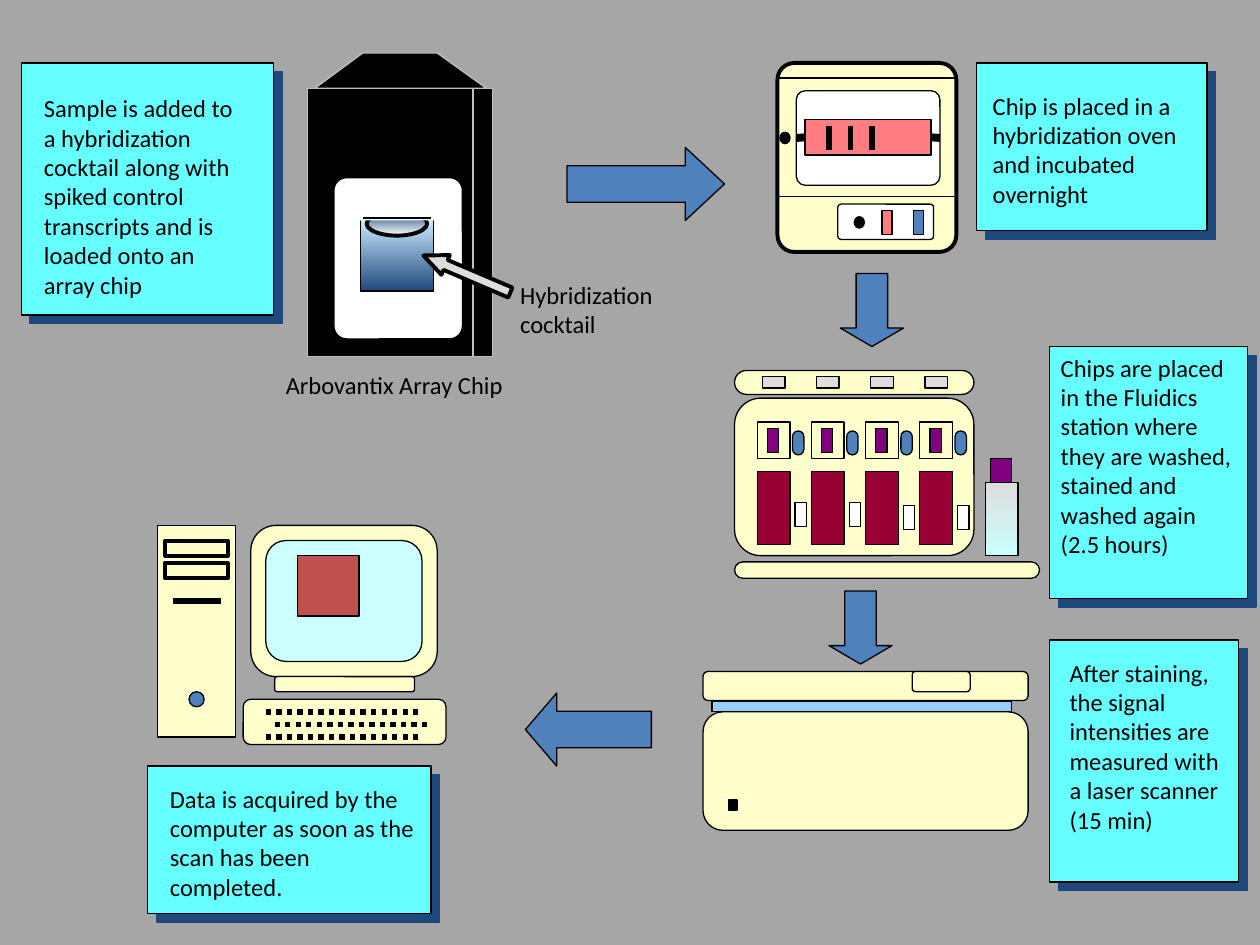
import pptx
import pptx.util
import pptx.dml.color
import pptx.enum.dml
import pptx.enum.shapes
import pptx.enum.text
import pptx.oxml.ns
from lxml import etree

Inches = pptx.util.Inches
Pt = pptx.util.Pt
RGBColor = pptx.dml.color.RGBColor
SHAPE = pptx.enum.shapes.MSO_SHAPE
qn = pptx.oxml.ns.qn

GREY = RGBColor(0xA6, 0xA6, 0xA6)
BLACK = RGBColor(0, 0, 0)
WHITE = RGBColor(0xFF, 0xFF, 0xFF)
AQUA = RGBColor(0x66, 0xFF, 0xFF)
NAVY = RGBColor(0x1F, 0x49, 0x7D)
CREAM = RGBColor(0xFF, 0xFF, 0xCC)
BLUE = RGBColor(0x4F, 0x81, 0xBD)
SKY = RGBColor(0x99, 0xCC, 0xFF)
ICE = RGBColor(0xCC, 0xFF, 0xFF)
PALE = RGBColor(0xCC, 0xEC, 0xFF)
SILVER = RGBColor(0xC0, 0xC0, 0xC0)
LIGHT = RGBColor(0xDD, 0xDD, 0xDD)
WINE = RGBColor(0x99, 0, 0x33)
PURPLE = RGBColor(0x80, 0, 0x80)
BRICK = RGBColor(0xC0, 0x50, 0x4D)
PINK = RGBColor(0xFF, 0x7C, 0x80)


class Diagram:
    font = "Calibri"
    size = 14
    thin = 0.75

    def __init__(self, s):
        self.s = s

    def finish(self, sp, fill, line, weight):
        sp.shadow.inherit = False
        if fill is None:
            sp.fill.background()
        elif isinstance(fill, RGBColor):
            sp.fill.solid()
            sp.fill.fore_color.rgb = fill
        else:
            sp.fill.gradient()
            sp.fill.gradient_angle = 270
            for stop, color in zip(sp.fill.gradient_stops, fill):
                stop.color.rgb = color
        if line is None:
            sp.line.fill.background()
        else:
            sp.line.color.rgb = line
            sp.line.width = Pt(weight)
        return sp

    def shape(self, x, y, w, h, fill, kind=SHAPE.RECTANGLE, adj=(),
              line=BLACK, weight=thin, rotation=0):
        sp = self.s.shapes.add_shape(kind, Inches(x), Inches(y), Inches(w), Inches(h))
        for i, value in enumerate(adj):
            sp.adjustments[i] = value
        sp.rotation = rotation
        return self.finish(sp, fill, line, weight)

    def rounded(self, x, y, w, h, fill, radius=0.167, weight=thin):
        return self.shape(x, y, w, h, fill, SHAPE.ROUNDED_RECTANGLE, (radius,), weight=weight)

    def dot(self, x, y, w, h, fill):
        return self.shape(x, y, w, h, fill, SHAPE.OVAL)

    def panel(self, x, y, w, h):
        sp = self.shape(x, y, w, h, AQUA)
        effects = sp._element.spPr.find(qn("a:effectLst"))
        shadow = etree.SubElement(effects, qn("a:outerShdw"), blurRad="0",
                                  dist=str(int(Pt(7.1))), dir="2700000",
                                  algn="ctr", rotWithShape="0")
        etree.SubElement(shadow, qn("a:srgbClr"), val=str(NAVY))

    def polygon(self, points, fill, line):
        scaled = [(Inches(x), Inches(y)) for x, y in points]
        builder = self.s.shapes.build_freeform(*scaled[0])
        builder.add_line_segments(scaled[1:], close=True)
        return self.finish(builder.convert_to_shape(), fill, line, self.thin)

    def line(self, x1, y1, x2, y2, weight=3, dash=None):
        cn = self.s.shapes.add_connector(pptx.enum.shapes.MSO_CONNECTOR.STRAIGHT,
                                         Inches(x1), Inches(y1), Inches(x2), Inches(y2))
        cn.line.color.rgb = BLACK
        cn.line.width = Pt(weight)
        if dash is not None:
            cn.line.dash_style = dash
        etree.SubElement(cn._element.spPr, qn("a:effectLst"))
        return cn

    def text(self, x, y, w, h, *lines):
        tf = self.s.shapes.add_textbox(Inches(x), Inches(y), Inches(w), Inches(h)).text_frame
        tf.word_wrap = True
        tf.auto_size = pptx.enum.text.MSO_AUTO_SIZE.SHAPE_TO_FIT_TEXT
        p = tf.paragraphs[0]
        for i, words in enumerate(lines):
            if i:
                p.add_line_break()
            r = p.add_run()
            r.text = words
            r.font.name = self.font
            r.font.size = Pt(self.size)
            r.font.color.rgb = BLACK


def draw_fluidics_station(d):
    d.panel(8.33, 2.75, 1.57, 2)
    d.rounded(5.83, 2.94, 1.9, 0.19, CREAM, 0.5)
    d.rounded(5.83, 3.16, 1.9, 1.25, CREAM)
    d.rounded(5.83, 4.46, 2.42, 0.13, CREAM, 0.5)
    for i, latch_y in enumerate((3.99, 3.99, 4.01, 4.01)):
        x = 6.01 + 0.43 * i
        d.shape(x, 3.74, 0.26, 0.58, WINE)
        d.shape(x, 3.35, 0.26, 0.29, CREAM)
        d.shape(x + 0.08, 3.4, 0.09, 0.19, PURPLE)
        d.rounded(x + 0.28, 3.42, 0.09, 0.19, BLUE, 0.5)
        d.shape(x + 0.04, 2.99, 0.18, 0.09, LIGHT)
        d.shape(x + 0.3, latch_y, 0.09, 0.19, WHITE)
    d.shape(7.82, 3.83, 0.26, 0.58, (LIGHT, ICE))
    d.shape(7.86, 3.64, 0.17, 0.19, PURPLE)
    d.text(8.32, 2.75, 1.61, 1.73, "Chips are placed in the Fluidics station where they are "
           "washed, stained and washed again (2.5 hours)")


def draw_scanner(d):
    d.panel(8.33, 5.08, 1.5, 1.92)
    d.rounded(5.58, 5.33, 2.58, 0.23, CREAM)
    d.rounded(5.58, 5.65, 2.58, 0.94, CREAM)
    d.shape(5.65, 5.57, 2.38, 0.08, SKY)
    d.shape(5.78, 6.35, 0.07, 0.08, BLACK)
    d.rounded(7.24, 5.33, 0.46, 0.16, CREAM)
    d.text(8.39, 5.17, 1.45, 1.5, "After staining, the signal intensities are measured "
           "with a laser scanner (15 min)")


def draw_computer(d):
    d.panel(1.17, 6.08, 2.25, 1.17)
    d.shape(1.25, 4.17, 0.62, 1.68, CREAM)
    d.line(1.37, 4.77, 1.75, 4.77)
    for y in (4.29, 4.47):
        d.shape(1.31, y, 0.5, 0.12, CREAM, weight=2.25)
    d.dot(1.5, 5.49, 0.12, 0.12, BLUE)
    d.rounded(1.99, 4.17, 1.48, 1.2, CREAM)
    d.rounded(2.11, 4.29, 1.24, 0.96, ICE)
    d.rounded(2.18, 5.37, 1.11, 0.12, CREAM)
    d.rounded(1.93, 5.55, 1.61, 0.36, CREAM)
    for x, y in ((2.11, 5.65), (2.18, 5.75), (2.11, 5.85)):
        d.line(x, y, x + 1.24, y, dash=pptx.enum.dml.MSO_LINE.ROUND_DOT)
    d.shape(2.36, 4.41, 0.49, 0.48, BRICK)
    d.text(1.25, 6.17, 2.18, 1.03,
           "Data is acquired by the computer as soon as the scan has been completed.")


def draw_oven(d):
    d.panel(7.75, 0.5, 1.83, 1.33)
    d.text(7.78, 0.67, 1.88, 1.03,
           "Chip is placed in a hybridization oven and incubated", "overnight")
    d.rounded(6.17, 0.5, 1.42, 1.5, CREAM, 0.094, 2.25)
    window = d.rounded(6.32, 0.72, 1.14, 0.75, WHITE, 0.094)
    drum = d.shape(6.39, 0.95, 1, 0.28, PINK)
    for x in (6.58, 6.75, 6.92):
        d.line(x, 1, x, 1.19)
    d.rounded(6.65, 1.62, 0.76, 0.28, WHITE, 0.094)
    d.dot(6.19, 1.05, 0.08, 0.09, BLACK)
    d.shape(6.17, 0.62, 1.42, 0.94, None)
    d.dot(6.78, 1.72, 0.08, 0.09, BLACK)
    for x, color in ((7, PINK), (7.25, BLUE)):
        d.shape(x, 1.67, 0.08, 0.19, color)
    for side, x1, x2 in ((3, 7.39, 7.46), (1, 6.39, 6.32)):
        axle = d.line(x1, 1.1, x2, 1.1, 4.5)
        axle.begin_connect(drum, side)
        axle.end_connect(window, side)


def draw_flow_arrows(d):
    d.shape(4.5, 1.17, 1.25, 0.58, BLUE, SHAPE.RIGHT_ARROW, (0.5, 0.536))
    for x, y in ((6.67, 2.17), (6.58, 4.69)):
        d.shape(x, y, 0.5, 0.58, BLUE, SHAPE.DOWN_ARROW, (0.5, 0.292))
    d.shape(4.17, 5.5, 1, 0.58, BLUE, SHAPE.LEFT_ARROW, (0.5, 0.429))


def draw_array_chip(d):
    d.text(4.03, 2.17, 1.5, 0.57, "Hybridization", "cocktail")
    d.panel(0.17, 0.5, 2, 2)
    d.text(2.17, 2.89, 2.17, 0.33, "Arbovantix Array Chip")
    d.shape(2.44, 0.7, 1.31, 2.13, BLACK, line=SILVER)
    d.rounded(2.65, 1.41, 1.02, 1.28, WHITE, 0.1)
    d.shape(2.86, 1.74, 0.58, 0.57, (PALE, NAVY))
    d.polygon([(2.5, 0.7), (2.88, 0.42), (3.47, 0.42), (3.86, 0.7)], BLACK, SILVER)
    d.shape(3.76, 0.7, 0.15, 2.13, BLACK, line=SILVER)
    d.shape(2.91, 1.68, 0.48, 0.19, (NAVY, WHITE), SHAPE.OVAL, weight=2.25)
    d.shape(2.79, 1.56, 0.84, 0.19, WHITE, line=None)
    d.line(2.88, 1.73, 3.42, 1.73, d.thin)
    d.shape(3.62, 1.8, 0.17, 0.75, LIGHT, SHAPE.DOWN_ARROW, (0.5, 1.125),
            weight=2.25, rotation=113.1)
    d.text(0.25, 0.69, 1.78, 1.73, "Sample is added to a hybridization cocktail along with "
           "spiked control transcripts and is loaded onto an array chip")


def main():
    prs = pptx.Presentation()
    prs.slide_width = Inches(10)
    prs.slide_height = Inches(7.5)
    s = prs.slides.add_slide(prs.slide_layouts[6])
    s.background.fill.solid()
    s.background.fill.fore_color.rgb = GREY
    d = Diagram(s)
    for draw in (draw_fluidics_station, draw_scanner, draw_computer,
                 draw_oven, draw_flow_arrows, draw_array_chip):
        draw(d)
    prs.save("out.pptx")


if __name__ == "__main__":
    main()
